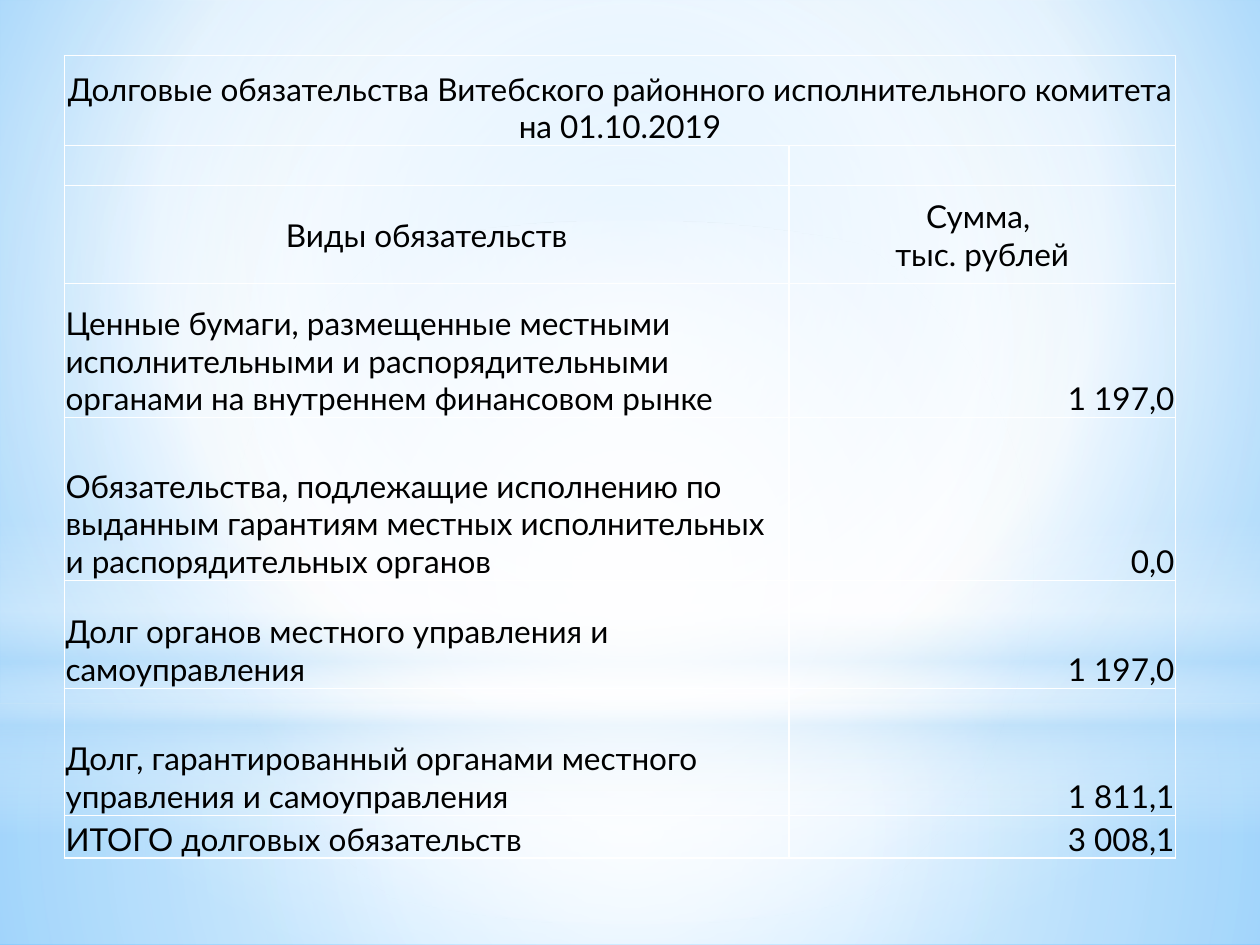
from lxml import etree
from pptx import Presentation
from pptx.dml.color import RGBColor
from pptx.enum import shapes, text
from pptx.oxml import ns
from pptx.util import Pt

WHITE, SKY, BLACK = "FFFFFF", "B4DCFA", "000000"
CENTER = (50, 50, 50, 50)
LEFT, MIDDLE, RIGHT = text.PP_ALIGN.LEFT, text.PP_ALIGN.CENTER, text.PP_ALIGN.RIGHT

TITLE = "Долговые обязательства Витебского районного исполнительного комитета на 01.10.2019"
HEADINGS = ("Виды обязательств", "Сумма, \nтыс. рублей")
DEBTS = [
    ("Ценные бумаги, размещенные местными исполнительными и распорядительными "
     "органами на внутреннем финансовом рынке", "1 197,0"),
    ("Обязательства, подлежащие исполнению по выданным гарантиям местных "
     "исполнительных и распорядительных органов", "0,0"),
    ("Долг органов местного управления и самоуправления", "1 197,0"),
    ("Долг, гарантированный органами местного управления и самоуправления", "1 811,1"),
    ("ИТОГО долговых обязательств", "3 008,1"),
]
COLUMN_WIDTHS = (414, 221)
ROW_HEIGHTS = (51.4, 22.9, 56, 76.6, 93, 61.7, 72.6, 24.5)


def color(value):
    """Return a colour from a hex string."""
    return RGBColor.from_string(value)


def add_element(parent, tag, **attributes):
    """Append a DrawingML element with the given attributes."""
    values = {name: str(value) for name, value in attributes.items()}
    return etree.SubElement(parent, ns.qn(tag), values)


def set_gradient(fill, owner, stops, focus=None, angle=90):
    """Give a fill a radial gradient around focus, or a linear one at angle."""
    fill.gradient()
    gradient = owner.xpath(".//a:gradFill")[0]
    for child in list(gradient):
        gradient.remove(child)
    stop_list = add_element(gradient, "a:gsLst")
    for position, value, opacity in stops:
        stop = add_element(stop_list, "a:gs", pos=position * 1000)
        tint = add_element(stop, "a:srgbClr", val=value)
        if opacity < 100:
            add_element(tint, "a:alpha", val=opacity * 1000)
    if focus:
        sides = {side: part * 1000 for side, part in zip("ltrb", focus)}
        add_element(add_element(gradient, "a:path", path="circle"), "a:fillToRect", **sides)
    else:
        add_element(gradient, "a:lin", ang=angle * 60000, scaled=0)


def add_glow(slide, kind, box, stops, focus=CENTER):
    """Add a borderless shape filled with a translucent gradient."""
    shape = slide.shapes.add_shape(kind, *map(Pt, box))
    shape.shadow.inherit = False
    shape.line.fill.background()
    set_gradient(shape.fill, shape._element.spPr, stops, focus)


def add_backdrop(slide, left, top, width, height):
    """Paint the background and its layers of light."""
    set_gradient(slide.background.fill, slide._element,
                 [(0, "9ED5FF", 100), (60, WHITE, 100), (100, "5BB9FF", 100)],
                 (20, 10, 20, 60))
    rectangle, oval = shapes.MSO_SHAPE.RECTANGLE, shapes.MSO_SHAPE.OVAL
    horizon = 402
    add_glow(slide, rectangle, (left, top + horizon, width, height - horizon),
             [(0, WHITE, 91), (37, WHITE, 76), (100, SKY, 79)])
    add_glow(slide, rectangle, (left, top, width, horizon),
             [(0, WHITE, 89), (48, WHITE, 62), (100, SKY, 79)])
    add_glow(slide, rectangle, (left, top + 297, width, 180),
             [(0, WHITE, 0), (29, WHITE, 30), (45, SKY, 40),
              (55, WHITE, 26), (65, SKY, 60), (100, WHITE, 0)], focus=None)
    add_glow(slide, oval, (left, top + 126, width, horizon),
             [(0, WHITE, 100), (56, WHITE, 0)])


def write(cell, content, align=LEFT, anchor=text.MSO_ANCHOR.BOTTOM, size=18, font="Lato"):
    """Put formatted text in a cell."""
    cell.vertical_anchor = anchor
    paragraph = cell.text_frame.paragraphs[0]
    paragraph.text = content.replace("\n", "\v")
    paragraph.alignment = align
    for run in paragraph.runs:
        run.font.size = Pt(size)
        run.font.name = font
        run.font.color.rgb = color(BLACK)


def style_cell(cell):
    """Clear the fill, tighten the margins and draw white borders."""
    cell.margin_left = cell.margin_right = cell.margin_top = Pt(0.7)
    cell.margin_bottom = 0
    properties = cell._tc.get_or_add_tcPr()
    for side in ("L", "R", "T", "B"):
        line = add_element(properties, f"a:ln{side}", w=Pt(1))
        add_element(add_element(line, "a:solidFill"), "a:srgbClr", val=WHITE)
    cell.fill.background()


def add_debt_table(slide, left, top):
    """Add the table of debt obligations."""
    width, height = sum(COLUMN_WIDTHS), sum(ROW_HEIGHTS)
    table = slide.shapes.add_table(len(ROW_HEIGHTS), len(COLUMN_WIDTHS),
                                   *map(Pt, (left, top, width, height))).table
    table.first_row = table.horz_banding = False
    for column, column_width in zip(table.columns, COLUMN_WIDTHS):
        column.width = Pt(column_width)
    for row, row_height in zip(table.rows, ROW_HEIGHTS):
        row.height = Pt(row_height)
        for cell in row.cells:
            style_cell(cell)
    table.cell(0, 0).merge(table.cell(0, 1))
    write(table.cell(0, 0), TITLE, align=MIDDLE)
    for index, heading in enumerate(HEADINGS):
        write(table.cell(2, index), heading, align=MIDDLE, anchor=text.MSO_ANCHOR.MIDDLE)
    for index, (name, amount) in enumerate(DEBTS, start=3):
        write(table.cell(index, 0), name)
        write(table.cell(index, 1), amount, align=RIGHT)


def main():
    """Build and save the presentation."""
    presentation = Presentation()
    presentation.slide_width, presentation.slide_height = Pt(720), Pt(540)
    slide = presentation.slides.add_slide(presentation.slide_layouts[6])
    add_backdrop(slide, 0, 0, 720, 540)
    add_debt_table(slide, 36.8, 31.8)
    presentation.save("out.pptx")


if __name__ == "__main__":
    main()
